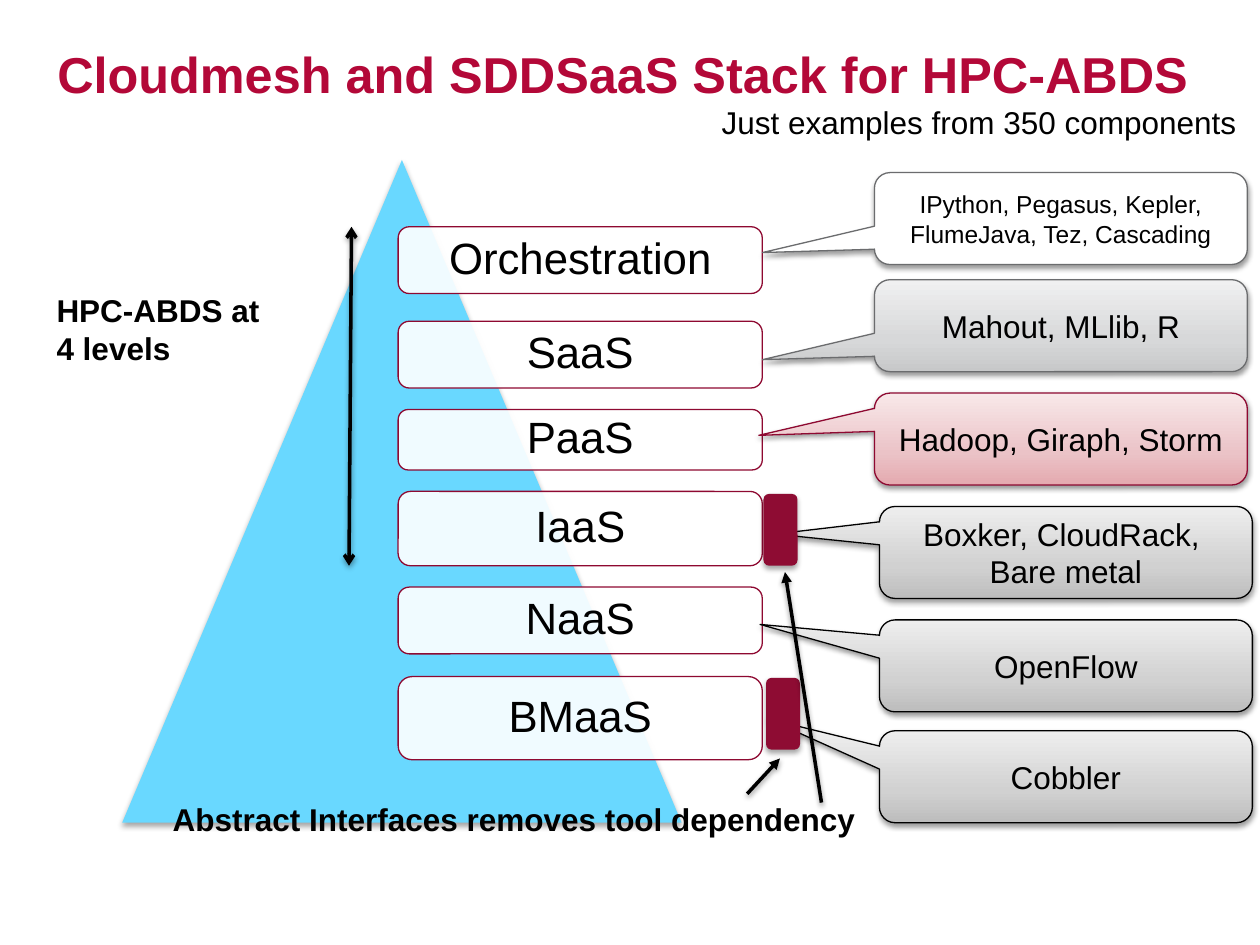
from dataclasses import dataclass

from lxml import etree
from pptx import Presentation
from pptx.dml.color import RGBColor
from pptx.enum.shapes import MSO_CONNECTOR, MSO_SHAPE
from pptx.enum.text import MSO_ANCHOR, PP_ALIGN
from pptx.oxml.ns import qn
from pptx.util import Inches, Pt

TRIANGLE = MSO_SHAPE.ISOSCELES_TRIANGLE
ROUNDED = MSO_SHAPE.ROUNDED_RECTANGLE
CALLOUT = MSO_SHAPE.ROUNDED_RECTANGULAR_CALLOUT
STRAIGHT = MSO_CONNECTOR.STRAIGHT
MIDDLE, TOP = MSO_ANCHOR.MIDDLE, MSO_ANCHOR.TOP
CENTER, LEFT = PP_ALIGN.CENTER, PP_ALIGN.LEFT


@dataclass(frozen=True)
class Theme:
    font: str = "Arial"
    title: str = "B30838"
    text: str = "000000"
    white: str = "FFFFFF"
    pyramid: str = "69D8FF"
    outline: str = "8E0931"
    interface: str = "8E0C33"
    gray_line: str = "6B6C6E"
    silver: tuple = ("C7C8C9", "D7D8D9", "F0F0F1")
    rose: tuple = ("E4A9AF", "EBC3C7", "F8E8E9")
    gray: tuple = ("BDBDBD", "D1D1D1", "EEEEEE")
    title_size: float = 28.8
    level_size: float = 25
    body_size: float = 18
    small_size: float = 14


THEME = Theme()
GRADIENT_POSITIONS = (0, 35, 100)
SOFT_SHADOW = {"alpha": 35, "distance": 1.8}
DEEP_SHADOW = {"alpha": 38, "distance": 1.6}

LEVEL_LEFT, LEVEL_WIDTH = 3.16, 2.89
LEVELS = [
    ("Orchestration", 1.8, 0.53),
    ("SaaS", 2.55, 0.53),
    ("PaaS", 3.25, 0.48),
    ("IaaS", 3.9, 0.59),
    ("NaaS", 4.66, 0.53),
    ("BMaaS", 5.37, 0.66),
]

CALLOUT_SIZE = (2.96, 0.73)
CALLOUTS = [
    ("IPython, Pegasus, Kepler, FlumeJava, Tez, Cascading", 6.94, 1.37,
     (-0.8, 0.37), THEME.white, THEME.gray_line, THEME.small_size),
    ("Mahout, MLlib, R", 6.94, 2.22,
     (-0.8, 0.37), THEME.silver, THEME.gray_line, THEME.body_size),
    ("Hadoop, Giraph, Storm", 6.94, 3.12,
     (-0.81, -0.04), THEME.rose, THEME.outline, THEME.body_size),
    ("Boxker, CloudRack, \vBare metal", 6.98, 4.02,
     (-0.78, -0.2), THEME.gray, THEME.text, THEME.body_size),
    ("OpenFlow", 6.98, 4.92,
     (-0.82, -0.45), THEME.gray, THEME.text, THEME.body_size),
    ("Cobbler", 6.98, 5.8,
     (-0.8, -0.63), THEME.gray, THEME.text, THEME.body_size),
]

INTERFACES = [(6.06, 3.92), (6.08, 5.38)]

LABELS = [
    ("Just examples from 350 components", (5.63, 0.77, 4.33, 0.4), LEFT, False, False),
    ("Abstract Interfaces removes tool dependency", (1, 6.3, 6.16, 0.4), CENTER, True, True),
    ("HPC-ABDS at 4 levels", (0.35, 2.26, 1.82, 0.71), LEFT, True, True),
]

ARROWS = [
    ((5.93, 6.3), (6.19, 6.02), {"tailEnd": "triangle"}),
    ((2.79, 1.8), (2.77, 4.49), {"headEnd": "arrow", "tailEnd": "arrow"}),
    ((6.52, 6.37), (6.23, 4.54), {"tailEnd": "triangle"}),
]


def set_attributes(target, values):
    for name, value in values.items():
        setattr(target, name, value)


def add_element(parent, tag, **attributes):
    return etree.SubElement(parent, qn(tag), attributes)


def add_color(parent, color, alpha=None):
    element = add_element(parent, "a:srgbClr", val=color)
    if alpha is not None:
        add_element(element, "a:alpha", val=str(alpha * 1000))


def add_shadow(effects, alpha, distance):
    shadow = add_element(effects, "a:outerShdw", blurRad=str(Pt(3.1)),
                         dist=str(Pt(distance)), dir="5400000", rotWithShape="0")
    add_color(shadow, THEME.text, alpha)


def write_text(shape, text, size, color=THEME.text, bold=False, align=CENTER,
               frame_format=None, paragraph_format=None):
    frame = shape.text_frame
    frame.text = text
    set_attributes(frame, {"word_wrap": True, "vertical_anchor": MIDDLE, **(frame_format or {})})
    paragraph = frame.paragraphs[0]
    set_attributes(paragraph, {"alignment": align, **(paragraph_format or {})})
    set_attributes(paragraph.font, {"name": THEME.font, "size": Pt(size), "bold": bold})
    paragraph.font.color.rgb = RGBColor.from_string(color)


def fill_shape(shape, fill):
    if isinstance(fill, str):
        shape.fill.solid()
        shape.fill.fore_color.rgb = RGBColor.from_string(fill)
        return
    shape.fill.gradient()
    shape.fill.gradient_angle = 90
    stops = shape._element.spPr.find(qn("a:gradFill")).find(qn("a:gsLst"))
    for stop in list(stops):
        stops.remove(stop)
    for position, color in zip(GRADIENT_POSITIONS, fill):
        add_color(add_element(stops, "a:gs", pos=str(position * 1000)), color)


def add_box(slide, kind, box, fill, line=None, shadow=None, adjustments=()):
    shape = slide.shapes.add_shape(kind, *map(Inches, box))
    for index, value in enumerate(adjustments):
        shape.adjustments[index] = value
    fill_shape(shape, fill)
    if line:
        shape.line.color.rgb = RGBColor.from_string(line)
        shape.line.width = Pt(0.75)
    else:
        shape.line.fill.background()
    shape.shadow.inherit = False
    if shadow:
        add_shadow(shape._element.spPr.find(qn("a:effectLst")), **shadow)
    return shape


def add_title(slide, text):
    title = slide.shapes.title
    box = dict(zip(("left", "top", "width", "height"), map(Inches, (0, 0.21, 9.89, 0.74))))
    set_attributes(title, box)
    write_text(title, text, THEME.title_size, THEME.title, bold=True)


def add_level(slide, name, top, height):
    shape = add_box(slide, ROUNDED, (LEVEL_LEFT, top, LEVEL_WIDTH, height),
                    THEME.white, THEME.outline)
    color = shape._element.spPr.find(qn("a:solidFill"))[0]
    add_element(color, "a:alpha", val="90000")
    sides = ("margin_left", "margin_top", "margin_right", "margin_bottom")
    write_text(shape, name, THEME.level_size,
               frame_format=dict.fromkeys(sides, Inches(0.14)),
               paragraph_format={"line_spacing": 0.9})


def add_callout(slide, text, left, top, pointer, fill, line, size):
    shape = add_box(slide, CALLOUT, (left, top, *CALLOUT_SIZE), fill, line,
                    DEEP_SHADOW, (*pointer, 0.17))
    write_text(shape, text, size)


def add_label(slide, text, box, align, bold, wrap):
    label = slide.shapes.add_textbox(*map(Inches, box))
    write_text(label, text, THEME.body_size, bold=bold, align=align,
               frame_format={"word_wrap": wrap, "vertical_anchor": TOP})


def add_arrow(slide, start, end, heads):
    arrow = slide.shapes.add_connector(STRAIGHT, *map(Inches, (*start, *end)))
    arrow.line.color.rgb = RGBColor.from_string(THEME.text)
    arrow.line.width = Pt(2)
    properties = arrow._element.spPr
    for tag, kind in heads.items():
        add_element(properties.find(qn("a:ln")), f"a:{tag}", type=kind)
    add_shadow(add_element(properties, "a:effectLst"), **DEEP_SHADOW)


def main():
    presentation = Presentation()
    set_attributes(presentation, {"slide_width": Inches(10), "slide_height": Inches(7.5)})
    slide = presentation.slides.add_slide(presentation.slide_layouts[5])
    add_title(slide, "Cloudmesh and SDDSaaS Stack for HPC-ABDS")
    add_box(slide, TRIANGLE, (0.97, 1.27, 4.44, 5.26), THEME.pyramid, shadow=SOFT_SHADOW)
    for level in LEVELS:
        add_level(slide, *level)
    for callout in CALLOUTS:
        add_callout(slide, *callout)
    for left, top in INTERFACES:
        add_box(slide, ROUNDED, (left, top, 0.27, 0.57), THEME.interface, shadow=SOFT_SHADOW)
    for label in LABELS:
        add_label(slide, *label)
    for arrow in ARROWS:
        add_arrow(slide, *arrow)
    presentation.save("out.pptx")


if __name__ == "__main__":
    main()
